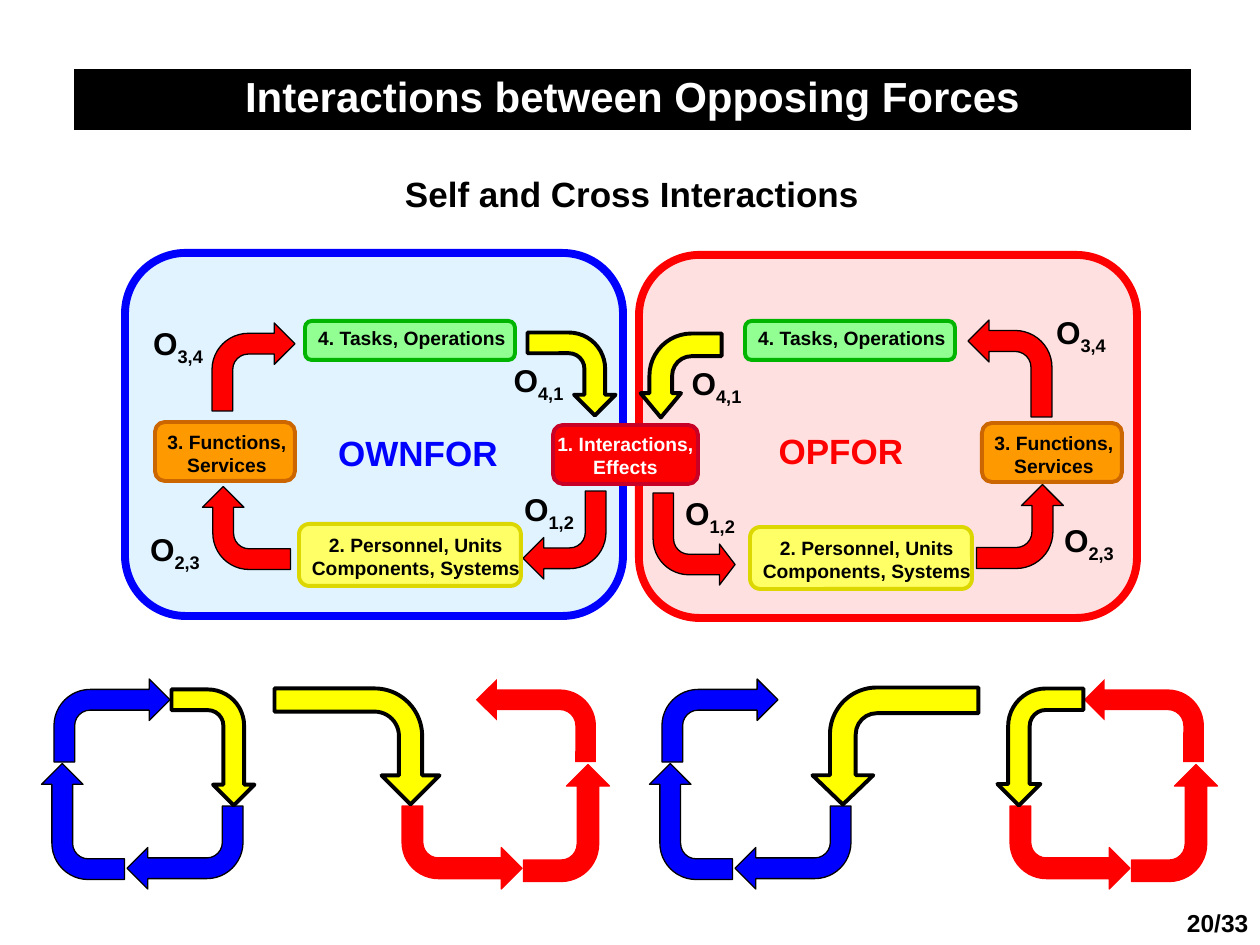
from lxml import etree
from pptx import Presentation
from pptx import util as u
from pptx.dml.color import RGBColor
from pptx.enum import shapes, text
from pptx.oxml.ns import qn

EMU_PER_PX = 914400 / 126
COLORS = {
    "black": "000000", "white": "FFFFFF", "red": "FF0000", "blue": "0000FF",
    "yellow": "FFFF00", "ownfor": "CCECFF", "opfor": "FFCCCC",
    "green": "91FF91", "green edge": "00B400",
    "lemon": "FFFF66", "lemon edge": "DCD700",
    "orange": "FF9900", "orange edge": "CC6600",
    "crimson": "FC0000", "crimson edge": "C80026",
}
ARROW_LOOKS = {
    "red": ("red", "black", 0.75),
    "blue": ("blue", "black", 0.75),
    "yellow": ("yellow", "black", 2.25),
    "edged": ("red", "red", 0.75),
    "bare": ("red", None, 0),
}
STAGES = {
    "tasks": (["4. Tasks, Operations"], "FLOWCHART_ALTERNATE_PROCESS",
              (210, 39), (-4, -1, 222, 35), "green", "black"),
    "personnel": (["2. Personnel, Units", "Components, Systems"], "ROUNDED_RECTANGLE",
                  (222, 62), (-4, 3, 242, 58), "lemon", "black"),
    "functions": (["3. Functions,", "Services"], "ROUNDED_RECTANGLE",
                  (140, 59), (-3, 2, 150, 59), "orange", "black"),
    "interactions": (["1. Interactions,", "Effects"], "ROUNDED_RECTANGLE",
                     (145, 59), (-15, 1, 175, 58), "crimson", "white"),
}
PLACED_STAGES = [
    ("tasks", 745, 321), ("tasks", 305, 321),
    ("personnel", 750, 527), ("personnel", 299, 524),
    ("functions", 982, 423), ("functions", 155, 422),
    ("interactions", 553, 425),
]
OPERATORS = [
    ("2,3", 139, 524, 95, "LEFT"), ("3,4", 142, 318, 95, "LEFT"),
    ("2,3", 1053, 515, 95, "LEFT"), ("3,4", 1045, 307, 95, "LEFT"),
    ("1,2", 508, 484, 82, "CENTER"), ("1,2", 669, 488, 82, "CENTER"),
    ("4,1", 491, 355, 95, "CENTER"), ("4,1", 669, 358, 95, "CENTER"),
]
FORCE_ARROWS = [
    ("red", (212, 323, 83, 88), 0, False, ()),
    ("red", (205, 484, 83, 88), 270, False, ()),
    ("red", (523, 491, 83, 88), 180, False, ()),
    ("yellow", (530, 330, 83, 88), 90, False, ()),
    ("red", (653, 493, 82, 92), 180, True, (0.25, 0.25, 0.19, 0.44)),
    ("yellow", (639, 335, 84, 81), 270, True, (0.28, 0.25, 0.3, 0.52)),
    ("red", (968, 320, 84, 97), 0, True, ()),
    ("red", (978, 483, 84, 87), 90, True, ()),
]
CYCLE_ARROWS = [
    ("blue", (127, 806, 116, 83), 180, False, ()),
    ("blue", (25, 780, 116, 83), 270, False, ()),
    ("blue", (54, 679, 116, 83), 0, False, ()),
    ("edged", (402, 806, 120, 83), 180, True, ()),
    ("edged", (508, 780, 117, 86), 90, True, ()),
    ("bare", (476, 679, 120, 83), 0, True, ()),
]
CYCLE_STARTS = [
    ("yellow", (155, 706, 116, 83), 90, False, ()),
    ("yellow", (982, 704, 117, 86), 270, True, ()),
    ("yellow", (299, 664, 116, 165), 90, False, (0.2, 0.25, 0.25, 0.41)),
    ("yellow", (837, 663, 117, 166), 270, True, (0.22, 0.26, 0.25, 0.4)),
]
CYCLE_PITCH = 608


def px(value):
    return u.Emu(round(value * EMU_PER_PX))


def color(name):
    return RGBColor.from_string(COLORS[name])


def apply(target, values):
    for key, value in values.items():
        setattr(target, key, value)


def write(paragraph, words, size, ink):
    run = paragraph.add_run()
    run.text = words
    apply(run.font, {"name": "Arial", "size": u.Pt(size), "bold": True})
    run.font.color.rgb = color(ink)
    return run


def add_outline(slide, preset, box, fill, edge, width):
    outline = slide.shapes.add_shape(getattr(shapes.MSO_SHAPE, preset), *map(px, box))
    outline.shadow.inherit = False
    outline.fill.solid()
    outline.fill.fore_color.rgb = color(fill)
    if edge:
        outline.line.color.rgb = color(edge)
        outline.line.width = u.Pt(width)
    else:
        outline.line.fill.background()
    return outline


def add_label(slide, lines, box, size, ink="black", align="CENTER", wrap=True):
    label = slide.shapes.add_textbox(*map(px, box))
    frame = label.text_frame
    apply(frame, {
        "word_wrap": wrap, "auto_size": text.MSO_AUTO_SIZE.SHAPE_TO_FIT_TEXT,
        "margin_left": px(11), "margin_right": px(11),
    })
    for index, words in enumerate(lines):
        paragraph = frame.add_paragraph() if index else frame.paragraphs[0]
        paragraph.alignment = getattr(text.PP_ALIGN, align)
        write(paragraph, words, size, ink)
    return label


def add_panel(slide, left, top, fill, edge):
    panel = add_outline(slide, "FLOWCHART_ALTERNATE_PROCESS",
                        (left, top, 498, 363), fill, edge, 4.5)
    tint = panel._element.spPr.find(qn("a:solidFill"))[0]
    etree.SubElement(tint, qn("a:alpha")).set("val", "60000")


def add_arrow(slide, look, box, rotation, flipped, bends, shift=0):
    left, top, width, height = box
    arrow = add_outline(slide, "BENT_ARROW", (left + shift, top, width, height),
                        *ARROW_LOOKS[look])
    arrow.rotation = rotation
    if flipped:
        arrow._element.spPr.find(qn("a:xfrm")).set("flipH", "1")
    for index, bend in enumerate(bends):
        arrow.adjustments[index] = bend


def add_stage(slide, kind, left, top):
    lines, preset, size, (dx, dy, width, height), tone, ink = STAGES[kind]
    add_outline(slide, preset, (left, top, *size), tone, f"{tone} edge", 2.25)
    add_label(slide, lines, (left + dx, top + dy, width, height), 11, ink,
              wrap=len(lines) > 1)


def add_operator(slide, indices, left, top, width, align):
    operator = add_label(slide, ["O"], (left, top, width, 50), 18, align=align)
    subscript = write(operator.text_frame.paragraphs[0], indices, 18, "black")
    subscript._r.get_or_add_rPr().set("baseline", "-25000")


def format_title(slide, words):
    title = slide.shapes.title
    apply(title, {"left": px(74), "top": px(69), "width": px(1117), "height": px(61)})
    title.fill.solid()
    title.fill.fore_color.rgb = color("black")
    apply(title.text_frame, {
        "auto_size": text.MSO_AUTO_SIZE.NONE, "word_wrap": True,
        "vertical_anchor": text.MSO_ANCHOR.MIDDLE,
    })
    heading = title.text_frame.paragraphs[0]
    apply(heading, {"alignment": text.PP_ALIGN.CENTER, "line_spacing": 0.85})
    write(heading, words, 24, "white")


def main():
    deck = Presentation()
    apply(deck, {"slide_width": px(1260), "slide_height": px(945)})
    slide = deck.slides.add_slide(deck.slide_layouts[5])
    format_title(slide, "Interactions between Opposing Forces")
    add_label(slide, ["Self and Cross Interactions"], (344, 166, 576, 54), 20)
    add_panel(slide, 639, 255, "opfor", "red")
    add_panel(slide, 125, 253, "ownfor", "blue")
    for arrow in FORCE_ARROWS:
        add_arrow(slide, *arrow)
    for stage in PLACED_STAGES:
        add_stage(slide, *stage)
    for operator in OPERATORS:
        add_operator(slide, *operator)
    add_label(slide, ["OWNFOR"], (322, 425, 192, 54), 20, "blue")
    add_label(slide, ["OPFOR"], (745, 423, 192, 54), 20, "red")
    for shift in (0, CYCLE_PITCH):
        for arrow in CYCLE_ARROWS:
            add_arrow(slide, *arrow, shift=shift)
    for arrow in CYCLE_STARTS:
        add_arrow(slide, *arrow)
    add_label(slide, ["20/33"], (1176, 902, 89, 43), 14, align="LEFT", wrap=False)
    deck.save("out.pptx")


if __name__ == "__main__":
    main()
